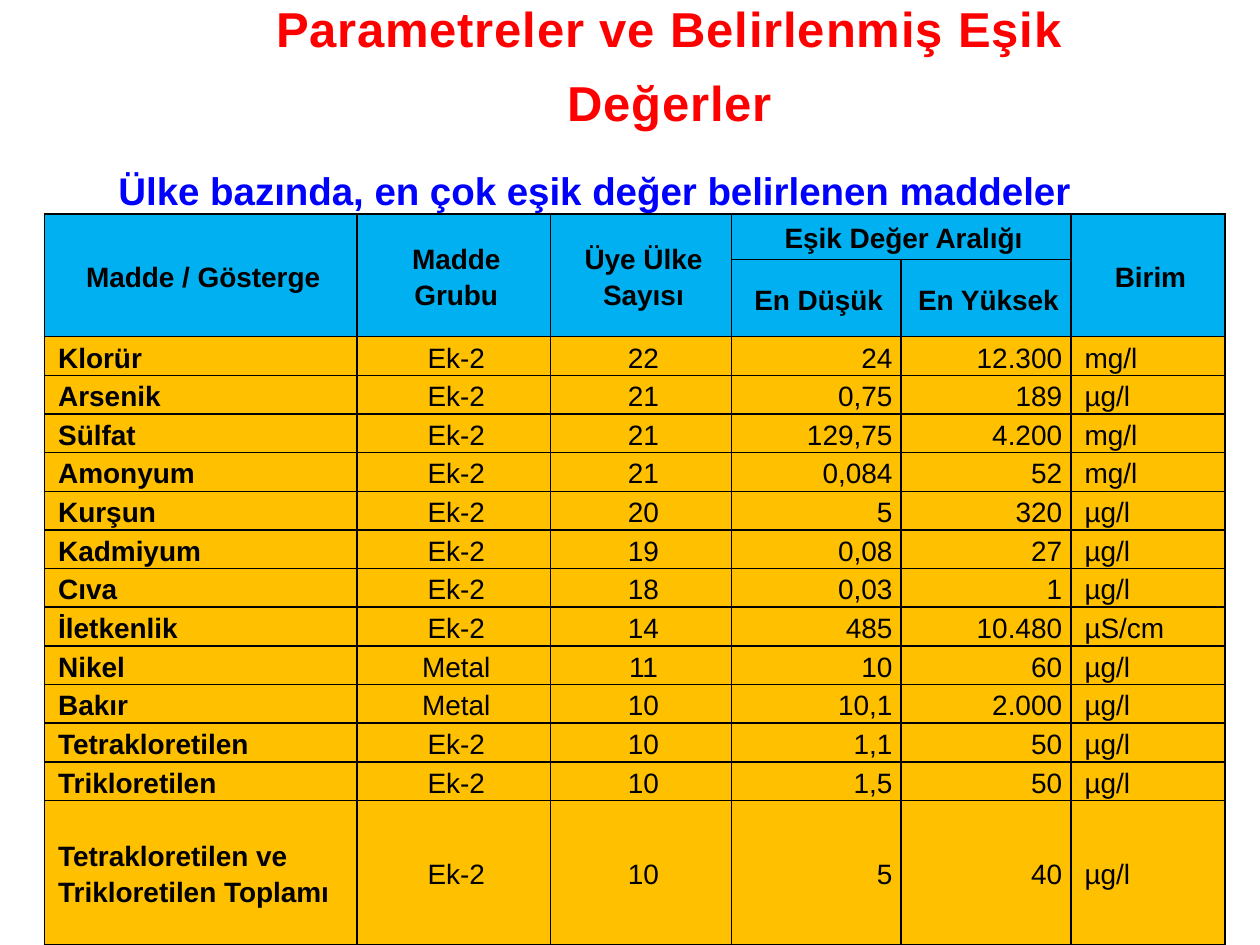
from lxml import etree
from pptx import Presentation
from pptx.dml.color import RGBColor
from pptx.enum.text import MSO_ANCHOR, PP_ALIGN
from pptx.oxml.ns import qn
from pptx.util import Pt

LEFT, CENTER, RIGHT = PP_ALIGN.LEFT, PP_ALIGN.CENTER, PP_ALIGN.RIGHT
TOP, MIDDLE = MSO_ANCHOR.TOP, MSO_ANCHOR.MIDDLE

BLACK = RGBColor(0x00, 0x00, 0x00)
RED = RGBColor(0xFF, 0x00, 0x00)
BLUE = RGBColor(0x00, 0x00, 0xFF)
HEADER_FILL = RGBColor(0x00, 0xB0, 0xF0)
BODY_FILL = RGBColor(0xFF, 0xC0, 0x00)

COL_WIDTHS = [178.6, 110.6, 103.4, 97, 97, 88.2]
BODY_ALIGNS = [LEFT, CENTER, CENTER, RIGHT, RIGHT, LEFT]
HEADERS = [
    ["Madde / Gösterge", "Madde Grubu", "Üye Ülke Sayısı",
     "Eşik Değer Aralığı", "", "Birim"],
    ["", "", "", "En Düşük", "En Yüksek", ""],
]
SUBSTANCES = [
    ["Klorür", "Ek-2", "22", "24", "12.300", "mg/l"],
    ["Arsenik", "Ek-2", "21", "0,75", "189", "µg/l"],
    ["Sülfat", "Ek-2", "21", "129,75", "4.200", "mg/l"],
    ["Amonyum", "Ek-2", "21", "0,084", "52", "mg/l"],
    ["Kurşun", "Ek-2", "20", "5", "320", "µg/l"],
    ["Kadmiyum", "Ek-2", "19", "0,08", "27", "µg/l"],
    ["Cıva", "Ek-2", "18", "0,03", "1", "µg/l"],
    ["İletkenlik", "Ek-2", "14", "485", "10.480", "µS/cm"],
    ["Nikel", "Metal", "11", "10", "60", "µg/l"],
    ["Bakır", "Metal", "10", "10,1", "2.000", "µg/l"],
    ["Tetrakloretilen", "Ek-2", "10", "1,1", "50", "µg/l"],
    ["Trikloretilen", "Ek-2", "10", "1,5", "50", "µg/l"],
    ["Tetrakloretilen ve Trikloretilen Toplamı", "Ek-2", "10", "5", "40", "µg/l"],
]
ROW_HEIGHTS = [25.9, 41.2] + [22.08] * (len(SUBSTANCES) - 1) + [82.6]
MERGES = [(0, 0, 1, 0), (0, 1, 1, 1), (0, 2, 1, 2), (0, 3, 0, 4), (0, 5, 1, 5)]


def set_paragraph(p, text, size, color, bold, align, spacing=1.0):
    """Fill a paragraph with one uniformly formatted run."""
    p.add_run().text = text
    p.alignment = align
    p.line_spacing = spacing
    p.font.name = "Arial"
    p.font.size = Pt(size)
    p.font.bold = bold
    p.font.color.rgb = color


def add_text(s, box, anchor):
    """Add an empty wrapping text box and return its text frame."""
    tf = s.shapes.add_textbox(*(Pt(v) for v in box)).text_frame
    tf.word_wrap = True
    tf.vertical_anchor = anchor
    return tf


def add_title(s):
    """Add the letter-spaced slide title."""
    tf = add_text(s, (93.6, 0, 578.2, 65.5), MIDDLE)
    p = tf.paragraphs[0]
    set_paragraph(p, "Parametreler ve Belirlenmiş Eşik Değerler",
                  28, RED, True, CENTER, 1.26)
    p.runs[0].font._element.set("spc", "50")


def add_subtitle(s):
    """Add the line that introduces the table."""
    tf = add_text(s, (36.7, 82.8, 648, 45.4), TOP)
    tf.margin_left, tf.margin_top = Pt(31), Pt(12.6)
    set_paragraph(tf.paragraphs[0],
                  "Ülke bazında, en çok eşik değer belirlenen maddeler",
                  22, BLUE, True, LEFT)


def set_borders(cell):
    """Draw a thin black line on all four sides of a cell."""
    tc_pr = cell._tc.get_or_add_tcPr()
    for i, side in enumerate(("a:lnL", "a:lnR", "a:lnT", "a:lnB")):
        ln = etree.Element(qn(side), w=str(Pt(1)))
        fill = etree.SubElement(ln, qn("a:solidFill"))
        etree.SubElement(fill, qn("a:srgbClr"), val=str(BLACK))
        tc_pr.insert(i, ln)


def style_cell(cell, text, fill, bold, align):
    """Give a cell its fill, borders, margins and text."""
    cell.fill.solid()
    cell.fill.fore_color.rgb = fill
    set_borders(cell)
    cell.vertical_anchor = MIDDLE
    cell.margin_left = cell.margin_right = Pt(5)
    cell.margin_top = cell.margin_bottom = Pt(0)
    if text:
        p = cell.text_frame.paragraphs[0]
        set_paragraph(p, text, 16, BLACK, bold, align, 1.15)
        p._p.get_or_add_pPr().set("marL", str(Pt(2.9)))


def add_threshold_table(s):
    """Add the table of substances and their threshold ranges."""
    rows = HEADERS + SUBSTANCES
    table = s.shapes.add_table(
        len(rows), len(COL_WIDTHS), Pt(25.4), Pt(122.4),
        Pt(sum(COL_WIDTHS)), Pt(sum(ROW_HEIGHTS))).table
    table.first_row = table.horz_banding = False
    for column, width in zip(table.columns, COL_WIDTHS):
        column.width = Pt(width)
    for row, height in zip(table.rows, ROW_HEIGHTS):
        row.height = Pt(height)
    for r, texts in enumerate(rows):
        header = r < len(HEADERS)
        for c, text in enumerate(texts):
            style_cell(table.cell(r, c), text,
                       HEADER_FILL if header else BODY_FILL,
                       header or c == 0,
                       CENTER if header else BODY_ALIGNS[c])
    for top, left, bottom, right in MERGES:
        table.cell(top, left).merge(table.cell(bottom, right))


def main():
    """Build and save the slide."""
    prs = Presentation()
    prs.slide_width, prs.slide_height = Pt(720), Pt(540)
    s = prs.slides.add_slide(prs.slide_layouts[6])
    add_title(s)
    add_subtitle(s)
    add_threshold_table(s)
    prs.save("out.pptx")


if __name__ == "__main__":
    main()
